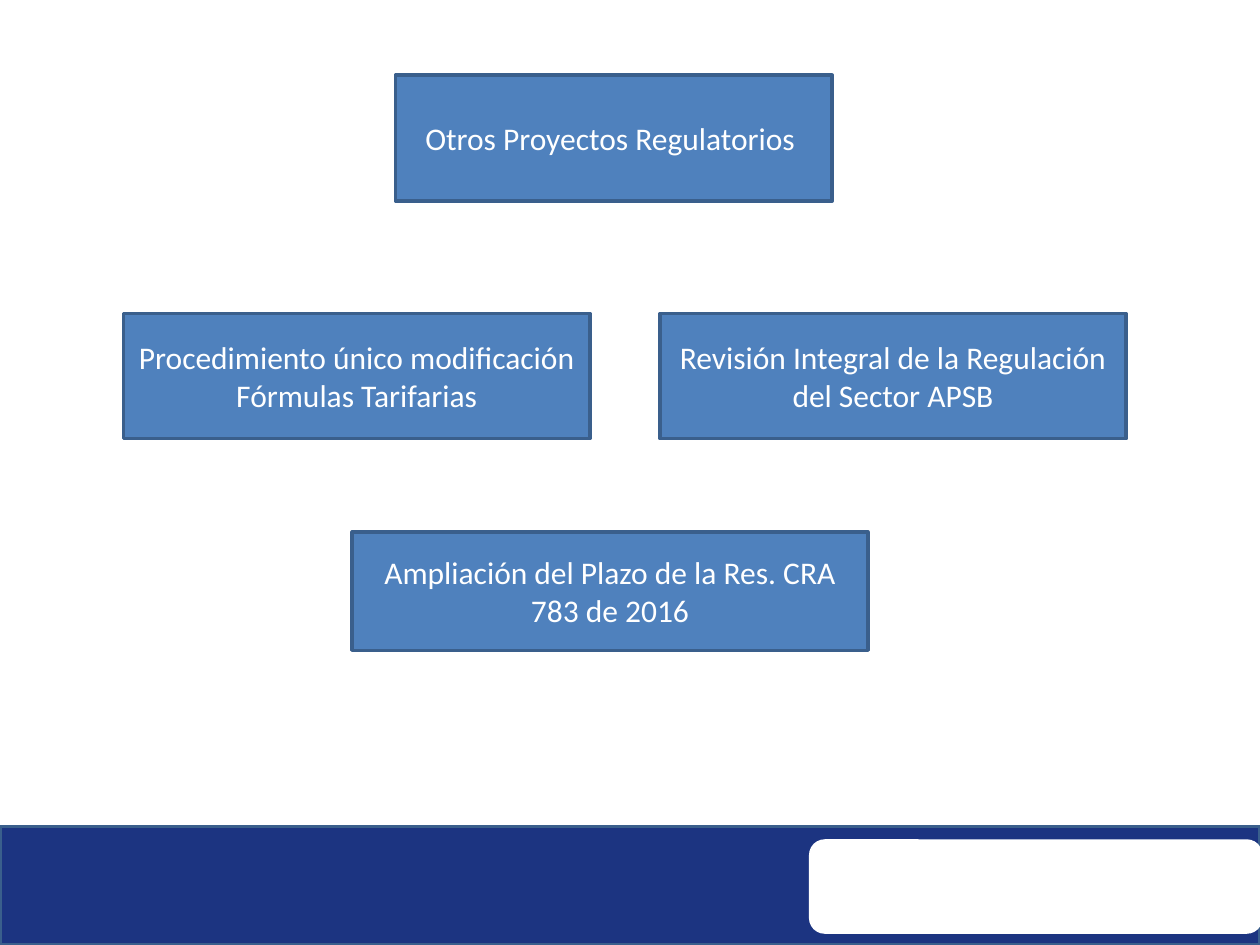
from dataclasses import dataclass

from pptx import Presentation
from pptx.dml.color import RGBColor
from pptx.enum.shapes import MSO_SHAPE
from pptx.enum.text import MSO_ANCHOR, PP_ALIGN
from pptx.util import Pt

RECTANGLE = MSO_SHAPE.RECTANGLE
ROUNDED = MSO_SHAPE.ROUNDED_RECTANGLE
MIDDLE = MSO_ANCHOR.MIDDLE
CENTER = PP_ALIGN.CENTER


@dataclass(frozen=True)
class Theme:
    white: RGBColor = RGBColor(0xFF, 0xFF, 0xFF)
    box: RGBColor = RGBColor(0x4F, 0x81, 0xBD)
    band: RGBColor = RGBColor(0x1C, 0x34, 0x81)
    outline: RGBColor = RGBColor(0x3A, 0x5F, 0x8C)
    font: str = "Calibri"
    body: int = 18
    line: int = 2


THEME = Theme()
WIDTH, HEIGHT = 720, 540


def add_panel(slide, box, fill, outline=None, kind=RECTANGLE):
    """Draw a flat shape; box is left, top, width, height in points."""
    panel = slide.shapes.add_shape(kind, *map(Pt, box))
    panel.shadow.inherit = False
    panel.fill.solid()
    panel.fill.fore_color.rgb = fill
    if outline is None:
        panel.line.fill.background()
    else:
        panel.line.color.rgb = outline
        panel.line.width = Pt(THEME.line)
    return panel


def add_project(slide, box, title):
    project = add_panel(slide, box, THEME.box, THEME.outline)
    frame = project.text_frame
    frame.word_wrap = True
    frame.vertical_anchor = MIDDLE
    paragraph = frame.paragraphs[0]
    paragraph.alignment = CENTER
    run = paragraph.add_run()
    run.text = title
    run.font.name = THEME.font
    run.font.size = Pt(THEME.body)
    run.font.color.rgb = THEME.white


def add_project_pair(slide, box, titles):
    """Share the box equally between the titles, with a fixed gap."""
    left, top, width, height = box
    gap = 40
    project_width = (width - gap * (len(titles) - 1)) / len(titles)
    for column, title in enumerate(titles):
        project_left = left + column * (project_width + gap)
        add_project(slide, (project_left, top, project_width, height), title)


def add_footer(slide, box):
    left, top, width, height = box
    add_panel(slide, box, THEME.band, THEME.outline)
    plate = (left + 462.3, top + 7.2, 259.2, height - 13.6)
    add_panel(slide, plate, THEME.white, kind=ROUNDED)


def main():
    deck = Presentation()
    deck.slide_width, deck.slide_height = Pt(WIDTH), Pt(HEIGHT)
    slide = deck.slides.add_slide(deck.slide_layouts[6])

    footer_top = 472.4
    add_footer(slide, (0, footer_top, WIDTH, HEIGHT - footer_top))
    add_project(slide, (226, 43, 249.5, 72), "Otros Proyectos Regulatorios ")
    add_project_pair(slide, (70.6, 179.2, 573, 71.5), (
        "Procedimiento único modificación Fórmulas Tarifarias",
        "Revisión Integral de la Regulación del Sector APSB",
    ))
    add_project(slide, (201.3, 304, 294.7, 67.7),
                "Ampliación del Plazo de la Res. CRA 783 de 2016")

    deck.save("out.pptx")


if __name__ == "__main__":
    main()
